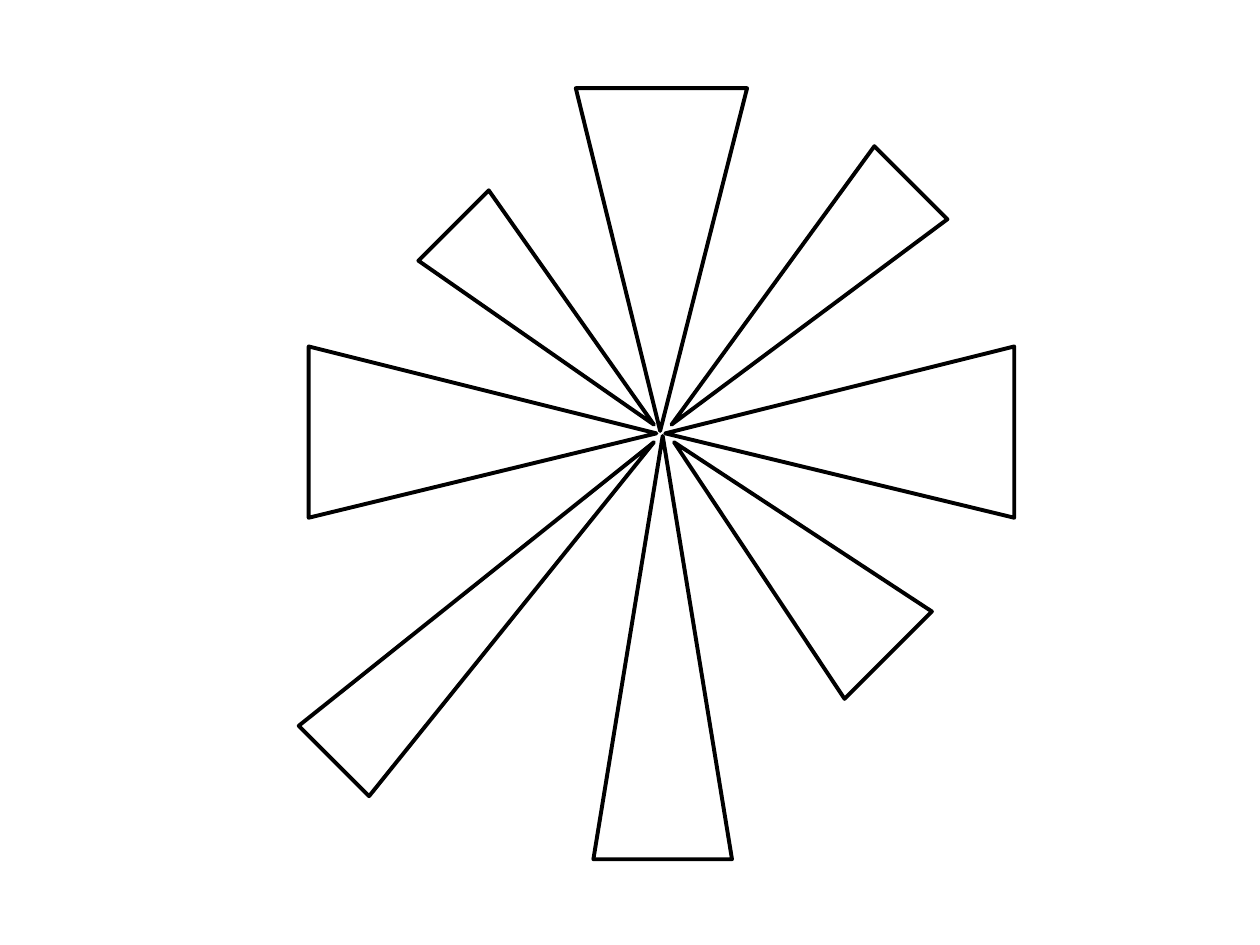
import math

import lxml.etree
import pptx
import pptx.dml.color
import pptx.oxml.ns
import pptx.util

COLUMNS, ROWS = 10, 7.5
CELL = pptx.util.Inches(1)
OUTLINE, PAPER = "000000", "FFFFFF"

# heading in degrees clockwise from north, tip, middle of the base, base width
RAYS = [
    (0, (5.24, 3.42), (5.25, 0.7), 1.36),
    (180, (5.26, 3.46), (5.26, 6.82), 1.1),
    (90, (5.28, 3.44), (8.05, 3.43), 1.36),
    (270, (5.21, 3.44), (2.45, 3.43), 1.36),
    (225, (5.19, 3.51), (2.65, 6.04), 0.79),
    (45, (5.33, 3.37), (7.23, 1.45), 0.82),
    (315, (5.19, 3.37), (3.6, 1.79), 0.79),
    (135, (5.35, 3.51), (7.05, 5.2), 0.98),
]


def colour(value):
    return pptx.dml.color.RGBColor.from_string(value)


def on_grid(column, row):
    return column * CELL, row * CELL


def add_ray(burst, heading, tip, base, width):
    angle = math.radians(heading)
    across = width / 2 * math.cos(angle)
    down = width / 2 * math.sin(angle)
    left = on_grid(base[0] - across, base[1] - down)
    right = on_grid(base[0] + across, base[1] + down)

    builder = burst.shapes.build_freeform(*left)
    builder.add_line_segments([right, on_grid(*tip)], close=True)
    ray = builder.convert_to_shape()
    ray.shadow.inherit = False
    ray.fill.solid()
    ray.fill.fore_color.rgb = colour(PAPER)
    ray.line.color.rgb = colour(OUTLINE)
    ray.line.width = pptx.util.Pt(2.25)
    outline = ray.fill._xPr.find(pptx.oxml.ns.qn("a:ln"))
    lxml.etree.SubElement(outline, pptx.oxml.ns.qn("a:round"))


def main():
    deck = pptx.Presentation()
    deck.slide_width, deck.slide_height = map(int, on_grid(COLUMNS, ROWS))
    slide = deck.slides.add_slide(deck.slide_layouts[6])
    burst = slide.shapes.add_group_shape()
    for ray in RAYS:
        add_ray(burst, *ray)
    deck.save("out.pptx")


if __name__ == "__main__":
    main()
